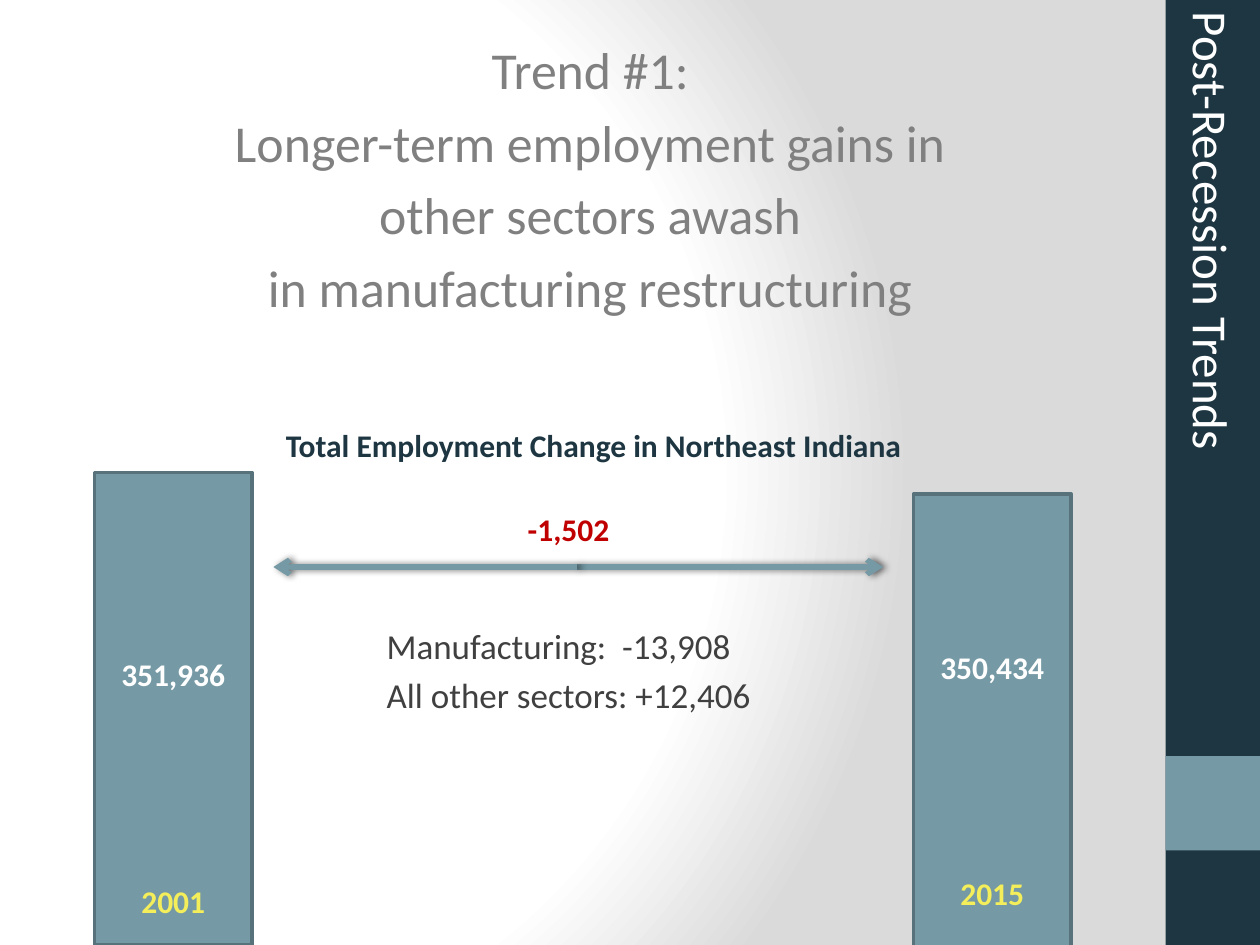
from dataclasses import dataclass

from lxml.etree import SubElement, fromstring
from pptx import Presentation
from pptx.dml.color import RGBColor
from pptx.enum.shapes import MSO_CONNECTOR, MSO_SHAPE
from pptx.enum.text import MSO_ANCHOR, PP_ALIGN
from pptx.oxml.ns import nsdecls, qn
from pptx.util import Inches, Pt

NAVY = RGBColor(0x1D, 0x36, 0x41)
TEAL = RGBColor(0x75, 0x9A, 0xA5)
EDGE = RGBColor(0x57, 0x72, 0x7A)
WHITE = RGBColor(0xFF, 0xFF, 0xFF)
GREY = RGBColor(0x80, 0x80, 0x80)
DARK = RGBColor(0x40, 0x40, 0x40)
RED = RGBColor(0xC0, 0x00, 0x00)
YELLOW = RGBColor(0xF5, 0xEE, 0x5B)
FONT = "Calibri"

BACKDROP = f"""<a:gradFill {nsdecls('a')} rotWithShape="1">
<a:gsLst>
<a:gs pos="0"><a:srgbClr val="FFFFFF"/></a:gs>
<a:gs pos="75000"><a:srgbClr val="FFFFFF"/></a:gs>
<a:gs pos="100000"><a:srgbClr val="DADADA"/></a:gs>
</a:gsLst>
<a:path path="circle">
<a:fillToRect l="20000" t="50000" r="100000" b="50000"/>
</a:path>
</a:gradFill>"""

SHADOW = f"""<a:effectLst {nsdecls('a')}>
<a:outerShdw blurRad="50800" dist="25400" dir="0">
<a:srgbClr val="000000"><a:alpha val="60000"/></a:srgbClr>
</a:outerShdw></a:effectLst>"""


@dataclass
class Label:
    lines: list[str]
    left: float
    top: float
    width: float
    height: float
    size: float
    color: RGBColor
    bold: bool = False
    align: PP_ALIGN = PP_ALIGN.LEFT
    indent: float = 0
    turn: float = 0


@dataclass
class Bar:
    year: str
    value: str
    left: float
    top: float
    height: float
    inset: float


LABELS = [
    Label(["Post-Recession Trends"], 6.66, 2.67, 5.92, 0.57, 28, WHITE, turn=90),
    Label(["Trend #1:", "Longer-term employment gains in",
           "other sectors awash", "in manufacturing restructuring"],
          0, 0.25, 9.25, 2.25, 29.6, GREY, align=PP_ALIGN.CENTER, indent=0.12),
    Label(["Manufacturing:  -13,908", "All other sectors: +12,406"],
          2.85, 4.91, 3.46, 1.68, 20, DARK, indent=0.12),
    Label(["-1,502"], 4.09, 4, 1.57, 0.4, 18, RED, bold=True),
    Label(["Total Employment Change in Northeast Indiana"],
          2.17, 3.33, 5.25, 0.4, 18, NAVY, bold=True),
]
BARS = [
    Bar("2001", "351,936", 0.75, 3.75, 3.75, 0.2),
    Bar("2015", "350,434", 7.25, 3.92, 3.6, 0.28),
]


def style(para, size: float, color: RGBColor, bold: bool) -> None:
    for run in para.runs:
        run.font.name = FONT
        run.font.size = Pt(size)
        run.font.bold = bold
        run.font.color.rgb = color


def add_rect(slide, left: float, top: float, width: float, height: float,
             fill: RGBColor):
    rect = slide.shapes.add_shape(MSO_SHAPE.RECTANGLE, Inches(left), Inches(top),
                                  Inches(width), Inches(height))
    rect.shadow.inherit = False
    rect.fill.solid()
    rect.fill.fore_color.rgb = fill
    rect.line.fill.background()
    return rect


def add_label(slide, label: Label) -> None:
    box = slide.shapes.add_textbox(Inches(label.left), Inches(label.top),
                                   Inches(label.width), Inches(label.height))
    box.rotation = label.turn
    frame = box.text_frame
    frame.word_wrap = True
    frame.text = "\n".join(label.lines)
    for para in frame.paragraphs:
        para.alignment = label.align
        if label.indent:
            para.space_before = Pt(label.size * 0.2)
            props = para._p.get_or_add_pPr()
            props.set("marL", str(Inches(label.indent)))
            props.set("indent", "0")
        style(para, label.size, label.color, label.bold)


def add_bar(slide, bar: Bar) -> None:
    rect = add_rect(slide, bar.left, bar.top, 1.25, bar.height, TEAL)
    rect.line.color.rgb = EDGE
    rect.line.width = Pt(2)
    frame = rect.text_frame
    frame.vertical_anchor = MSO_ANCHOR.BOTTOM
    frame.margin_bottom = Inches(bar.inset)
    frame.text = f"{bar.value}\n{bar.year}"
    for para, color in zip(frame.paragraphs, (WHITE, YELLOW)):
        para.alignment = PP_ALIGN.CENTER
        style(para, 18, color, True)
    frame.paragraphs[1].space_before = Pt(108)


def add_arrow(slide, start: float, end: float, level: float) -> None:
    arrow = slide.shapes.add_connector(MSO_CONNECTOR.STRAIGHT, Inches(start),
                                       Inches(level), Inches(end), Inches(level))
    arrow.line.color.rgb = TEAL
    arrow.line.width = Pt(3)
    SubElement(arrow.line._get_or_add_ln(), qn("a:tailEnd")).set("type", "arrow")
    arrow._element.spPr.append(fromstring(SHADOW))


def main() -> None:
    deck = Presentation()
    deck.slide_width, deck.slide_height = Inches(10), Inches(7.5)
    slide = deck.slides.add_slide(deck.slide_layouts[6])

    # Backdrop
    slide.background.fill.gradient()
    old = slide.element.find(".//" + qn("a:gradFill"))
    old.getparent().replace(old, fromstring(BACKDROP))

    # Side band
    add_rect(slide, 9.25, 0, 0.75, 7.5, NAVY)
    add_rect(slide, 9.25, 6, 0.75, 0.75, TEAL)

    # Bars, with arrows between them
    for bar in BARS:
        add_bar(slide, bar)
    for end in (7.01, 2.17):
        add_arrow(slide, 4.58, end, 4.5)

    # Text
    for label in LABELS:
        add_label(slide, label)

    deck.save("out.pptx")


if __name__ == "__main__":
    main()
